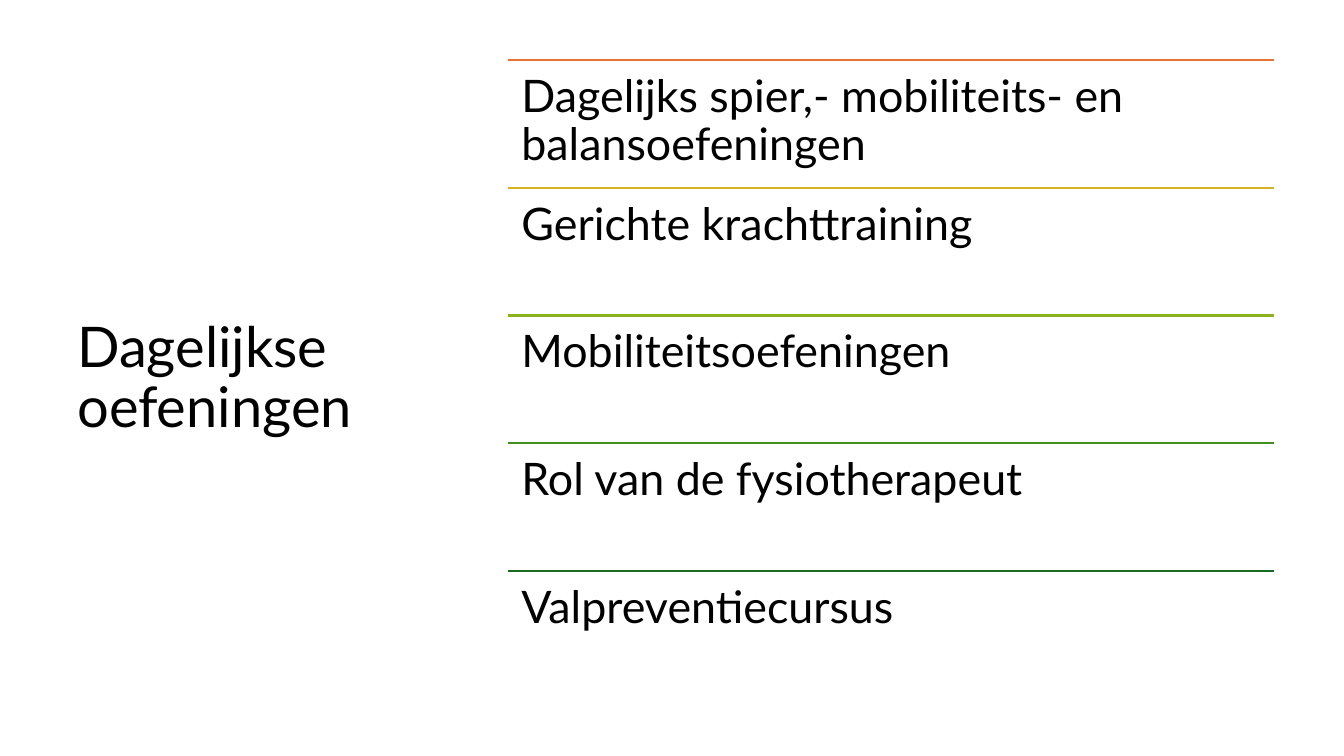
"""Builds a slide with a title and a ruled list of daily exercises."""
from lxml import etree
from pptx import Presentation, util as u
from pptx.dml.color import RGBColor
from pptx.enum import shapes, text
from pptx.oxml.ns import qn

TITLE = "Dagelijkse oefeningen"
BLACK = RGBColor(0x00, 0x00, 0x00)
ITEMS = [
    ("Dagelijks spier,- mobiliteits- en balansoefeningen", RGBColor(0xE9, 0x71, 0x32)),
    ("Gerichte krachttraining", RGBColor(0xD8, 0xB1, 0x1D)),
    ("Mobiliteitsoefeningen", RGBColor(0x8E, 0xB2, 0x1E)),
    ("Rol van de fysiotherapeut", RGBColor(0x40, 0x8E, 0x1C)),
    ("Valpreventiecursus", RGBColor(0x19, 0x6B, 0x24)),
]
FONT = "Lato"
TOP, HEIGHT = u.Cm(1.52), u.Cm(16.08)
TITLE_LEFT, TITLE_WIDTH = u.Cm(1.7), u.Cm(9.7)
LIST_LEFT, LIST_WIDTH = u.Cm(12.8), u.Cm(19.3)


def add_text(s, words, box, size, inset_x, inset_y, anchor):
    sp = s.shapes.add_textbox(*box)
    tf = sp.text_frame
    tf.word_wrap = True
    tf.vertical_anchor = anchor
    tf.margin_left = tf.margin_right = inset_x
    tf.margin_top = tf.margin_bottom = inset_y
    p = tf.paragraphs[0]
    p.line_spacing = 0.9
    r = p.add_run()
    r.text = words
    r.font.name, r.font.size = FONT, u.Pt(size)
    r.font.color.rgb = BLACK


def add_rule(s, y, color):
    line = s.shapes.add_connector(
        shapes.MSO_CONNECTOR.STRAIGHT, LIST_LEFT, y, LIST_LEFT + LIST_WIDTH, y)
    line.line.color.rgb = color
    line.line.width = u.Pt(1.5)
    etree.SubElement(line._element.spPr, qn("a:effectLst"))


def main():
    prs = Presentation()
    prs.slide_width, prs.slide_height = u.Cm(33.87), u.Cm(19.05)
    s = prs.slides.add_slide(prs.slide_layouts[6])
    add_text(s, TITLE, (TITLE_LEFT, TOP, TITLE_WIDTH, HEIGHT), 40,
             u.Cm(0.25), u.Cm(0.13), text.MSO_ANCHOR.MIDDLE)
    row = HEIGHT // len(ITEMS)
    for i, (words, color) in enumerate(ITEMS):
        y = TOP + i * row
        add_rule(s, y, color)
        add_text(s, words, (LIST_LEFT, y, LIST_WIDTH, row), 32,
                 u.Cm(0.34), u.Cm(0.34), text.MSO_ANCHOR.TOP)
    prs.save("out.pptx")


if __name__ == "__main__":
    main()
